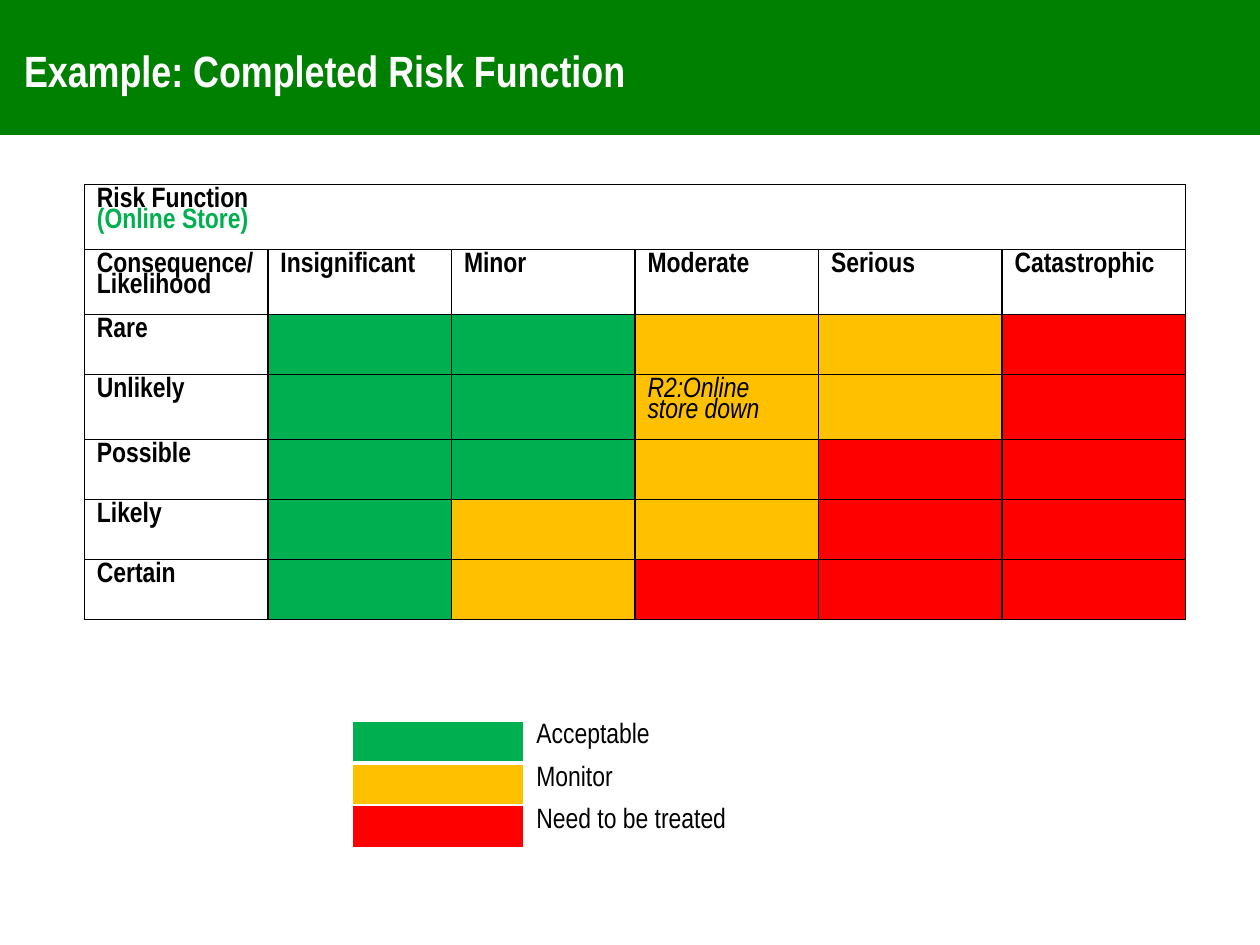
from lxml import etree
from pptx import Presentation
from pptx import util as u
from pptx.dml.color import RGBColor
from pptx.enum import shapes, text
from pptx.oxml import ns

HEADER_GREEN = RGBColor(0x00, 0x80, 0x00)
GREEN = RGBColor(0x00, 0xB0, 0x50)
AMBER = RGBColor(0xFF, 0xC0, 0x00)
RED = RGBColor(0xFF, 0x00, 0x00)
BLACK = RGBColor(0x00, 0x00, 0x00)
WHITE = RGBColor(0xFF, 0xFF, 0xFF)

LEVELS = {"G": GREEN, "A": AMBER, "R": RED}
CONSEQUENCES = ["Insignificant", "Minor", "Moderate", "Serious", "Catastrophic"]
LIKELIHOODS = {
    "Rare": "GGAAR",
    "Unlikely": "GGAAR",
    "Possible": "GGARR",
    "Likely": "GAARR",
    "Certain": "GARRR",
}
LEGEND = {"G": "Acceptable", "A": "Monitor", "R": "Need to be treated"}


class RiskSlide:
    font_name = "Arial Narrow"
    body_size = 16
    title_size = 25
    line_spacing = 0.8

    def __init__(self, deck):
        self.slide = deck.slides.add_slide(deck.slide_layouts[5])

    def style(self, paragraph, size, color, bold=False, italic=False):
        font = paragraph.font
        font.name = self.font_name
        font.size = u.Pt(size)
        font.bold = bold
        font.italic = italic
        font.color.rgb = color

    def header_bar(self, left, top, width, height):
        bar = self.slide.shapes.add_shape(
            shapes.MSO_SHAPE.RECTANGLE,
            u.Cm(left), u.Cm(top), u.Cm(width), u.Cm(height))
        bar.shadow.inherit = False
        bar.fill.solid()
        bar.fill.fore_color.rgb = HEADER_GREEN
        bar.line.fill.background()
        bar._element.getparent().insert(2, bar._element)

    def title(self, wording, left, top, width, height):
        title = self.slide.shapes.title
        title.left, title.top = u.Cm(left), u.Cm(top)
        title.width, title.height = u.Cm(width), u.Cm(height)
        frame = title.text_frame
        frame.text = wording
        frame.vertical_anchor = text.MSO_ANCHOR.MIDDLE
        heading = frame.paragraphs[0]
        heading.alignment = text.PP_ALIGN.LEFT
        self.style(heading, self.title_size, WHITE, bold=True)

    def table(self, left, top, widths, heights):
        table = self.slide.shapes.add_table(
            len(heights), len(widths), u.Cm(left), u.Cm(top),
            u.Cm(sum(widths)), u.Cm(sum(heights))).table
        table.first_row = False
        table.horz_banding = False
        for column, width in zip(table.columns, widths):
            column.width = u.Cm(width)
        for row, height in zip(table.rows, heights):
            row.height = u.Cm(height)
        return table

    def borders(self, cell, color, top=1, bottom=1):
        properties = cell._tc.get_or_add_tcPr()
        for side, points in (("L", 1), ("R", 1), ("T", top), ("B", bottom)):
            line = etree.SubElement(
                properties, ns.qn(f"a:ln{side}"), w=str(u.Pt(points)))
            fill = etree.SubElement(line, ns.qn("a:solidFill"))
            etree.SubElement(fill, ns.qn("a:srgbClr"), val=str(color))

    def cell(self, cell, wording="", fill=None, bold=False, italic=False,
             colors=(BLACK, BLACK)):
        if fill is None:
            cell.fill.background()
        else:
            cell.fill.solid()
            cell.fill.fore_color.rgb = fill
        cell.text = wording
        for paragraph, color in zip(cell.text_frame.paragraphs, colors):
            paragraph.line_spacing = self.line_spacing
            self.style(paragraph, self.body_size, color, bold, italic)

    def risk_matrix(self, left, top):
        tall, normal = 1.31, 1.21
        heights = [tall, tall, normal, tall, normal, normal, normal]
        matrix = self.table(left, top, [3.7] * 6, heights)
        for cell in matrix.iter_cells():
            self.borders(cell, BLACK)
        matrix.cell(0, 0).merge(matrix.cell(0, 5))
        self.cell(matrix.cell(0, 0), "Risk Function\n(Online Store)",
                  bold=True, colors=(BLACK, GREEN))
        headings = ["Consequence/\nLikelihood"] + CONSEQUENCES
        for column, heading in enumerate(headings):
            self.cell(matrix.cell(1, column), heading, bold=True)
        risks = {("Unlikely", "Moderate"): "R2:Online store down"}
        for row, (likelihood, levels) in enumerate(LIKELIHOODS.items(), 2):
            self.cell(matrix.cell(row, 0), likelihood, bold=True)
            for column, level in enumerate(levels, 1):
                risk = risks.get((likelihood, CONSEQUENCES[column - 1]), "")
                self.cell(matrix.cell(row, column), risk,
                          fill=LEVELS[level], italic=True)

    def legend(self, left, top):
        legend = self.table(left, top, [3.45, 9.73], [0.85] * len(LEGEND))
        for row, (level, meaning) in enumerate(LEGEND.items()):
            swatch, label = legend.cell(row, 0), legend.cell(row, 1)
            for cell in (swatch, label):
                self.borders(cell, WHITE, top=3 if row == 1 else 1,
                             bottom=3 if row == 0 else 1)
            self.cell(swatch, fill=LEVELS[level])
            self.cell(label, meaning)


def main():
    deck = Presentation()
    deck.slide_width, deck.slide_height = u.Cm(25.4), u.Cm(19.05)
    risk_slide = RiskSlide(deck)
    risk_slide.header_bar(0, -0.08, 25.4, 2.8)
    risk_slide.title("Example: Completed Risk Function", 0.23, 0.53, 22.86, 1.75)
    risk_slide.risk_matrix(1.7, 3.72)
    risk_slide.legend(7.11, 14.53)
    deck.save("out.pptx")


if __name__ == "__main__":
    main()
